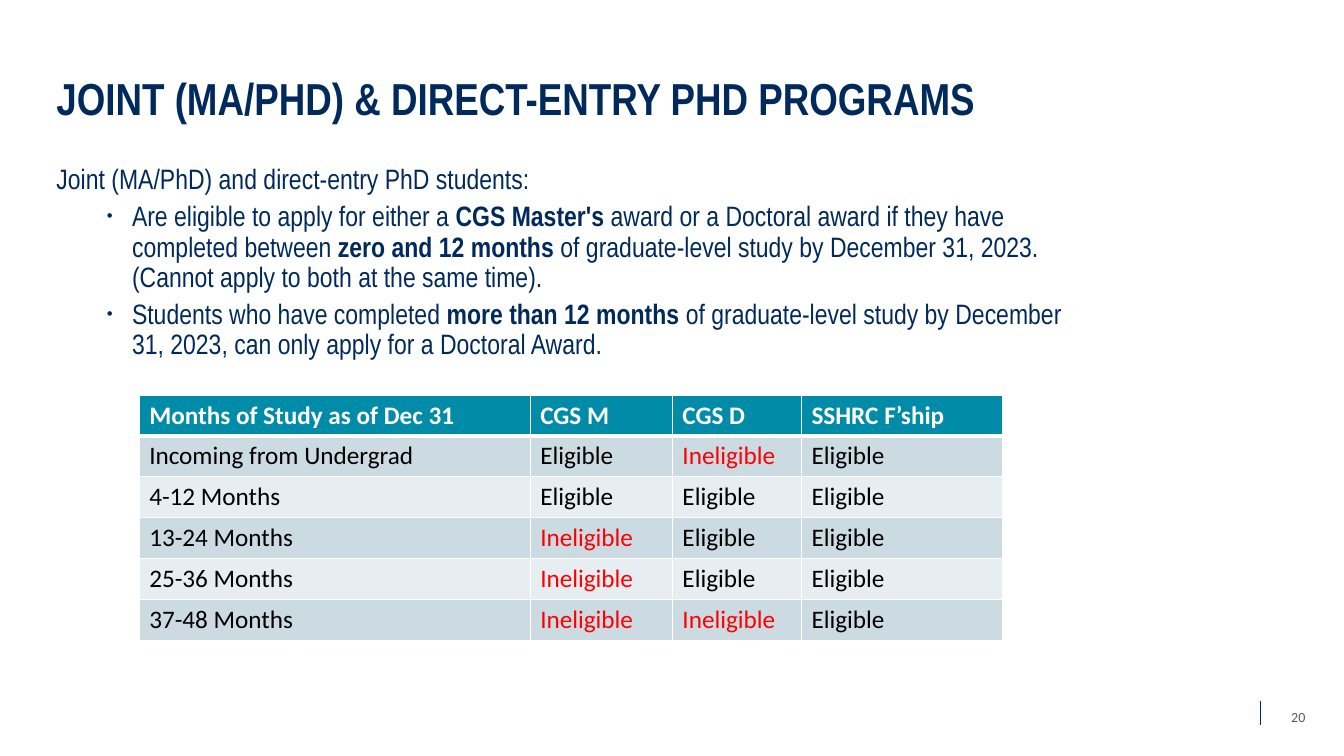
from dataclasses import dataclass

from lxml.etree import SubElement
from pptx import Presentation
from pptx.dml.color import RGBColor
from pptx.enum.shapes import MSO_CONNECTOR
from pptx.enum.text import MSO_ANCHOR, MSO_AUTO_SIZE, PP_ALIGN
from pptx.oxml.ns import qn
from pptx.util import Pt


@dataclass(frozen=True)
class Theme:
    navy: str = "002A5C"
    teal: str = "008BA9"
    band_dark: str = "CCDAE2"
    band_light: str = "E7EEF1"
    white: str = "FFFFFF"
    black: str = "000000"
    red: str = "FF0000"
    grey: str = "595959"
    text_font: str = "Arial Narrow"
    table_font: str = "Calibri"
    title_size: int = 32
    body_size: int = 20
    table_size: int = 18
    number_size: int = 10


THEME = Theme()

TITLE = "JOINT (MA/PHD) & DIRECT-ENTRY PHD PROGRAMS"
INTRO = "Joint (MA/PhD) and direct-entry PhD students:"
# Each bullet is a list of (words, bold) pieces.
RULES = [
    [("Are eligible to apply for either a ", False),
     ("CGS Master's ", True),
     ("award or a Doctoral award if they have completed between ", False),
     ("zero and 12 months ", True),
     ("of graduate-level study by December 31, 2023. "
      "(Cannot apply to both at the same time).", False)],
    [("Students who have completed ", False),
     ("more than 12 months ", True),
     ("of graduate-level study by December 31, 2023, "
      "can only apply for a Doctoral Award.", False)],
]
YES, NO = "Eligible", "Ineligible"
ELIGIBILITY = [
    ["Months of Study as of Dec 31", "CGS M", "CGS D", "SSHRC F’ship"],
    ["Incoming from Undergrad", YES, NO, YES],
    ["4-12 Months", YES, YES, YES],
    ["13-24 Months", NO, YES, YES],
    ["25-36 Months", NO, YES, YES],
    ["37-48 Months", NO, NO, YES],
]
COLUMN_WIDTHS = [279.3, 101.6, 92.2, 144]


def rgb(colour):
    return RGBColor.from_string(colour)


def set_font(paragraph, name, size, colour, bold=False):
    font = paragraph.font
    font.name, font.size, font.bold = name, Pt(size), bold
    font.color.rgb = rgb(colour)


def place(shape, left, top, width, height):
    shape.left, shape.top = Pt(left), Pt(top)
    shape.width, shape.height = Pt(width), Pt(height)


def set_bullet(paragraph, indent, hanging, char=None):
    """Set the indents, and a small bullet if char is given."""
    props = paragraph._p.get_or_add_pPr()
    props.set("marL", str(Pt(indent)))
    props.set("indent", str(-Pt(hanging)))
    if char:
        SubElement(props, qn("a:buSzPct"), val="60000")
        SubElement(props, qn("a:buFont"), typeface="Arial")
        SubElement(props, qn("a:buChar"), char=char)
    else:
        SubElement(props, qn("a:buNone"))


def fill_title(title, box):
    place(title, *box)
    frame = title.text_frame
    frame.text = TITLE
    frame.vertical_anchor = MSO_ANCHOR.BOTTOM
    frame.auto_size = MSO_AUTO_SIZE.NONE
    heading = frame.paragraphs[0]
    heading.alignment = PP_ALIGN.LEFT
    heading.line_spacing = 0.9
    set_font(heading, THEME.text_font, THEME.title_size, THEME.navy, bold=True)


def fill_body(body, box):
    place(body, *box)
    frame = body.text_frame
    frame.auto_size = MSO_AUTO_SIZE.NONE
    frame.text = INTRO
    intro = frame.paragraphs[0]
    set_bullet(intro, 0, 0)
    intro.space_before = Pt(0)
    for pieces in RULES:
        rule = frame.add_paragraph()
        rule.level = 1
        set_bullet(rule, 54, 18, "•")
        rule.space_before = Pt(5)
        for words, bold in pieces:
            run = rule.add_run()
            run.text = words
            if bold:
                run.font.bold = True
    for paragraph in frame.paragraphs:
        paragraph.line_spacing = 0.9
        set_font(paragraph, THEME.text_font, THEME.body_size, THEME.navy)


def set_borders(cell, top, bottom):
    """Draw white borders; top and bottom are widths in points."""
    props = cell._tc.get_or_add_tcPr()
    widths = {"a:lnL": 1, "a:lnR": 1, "a:lnT": top, "a:lnB": bottom}
    for position, (side, width) in enumerate(widths.items()):
        line = props.makeelement(qn(side), {"w": str(Pt(width))})
        fill = SubElement(line, qn("a:solidFill"))
        SubElement(fill, qn("a:srgbClr"), val=THEME.white)
        props.insert(position, line)


def add_eligibility_table(slide, left, top, row_height):
    table = slide.shapes.add_table(
        len(ELIGIBILITY), len(COLUMN_WIDTHS), Pt(left), Pt(top),
        Pt(sum(COLUMN_WIDTHS)), Pt(row_height * len(ELIGIBILITY))).table
    for column, width in zip(table.columns, COLUMN_WIDTHS):
        column.width = Pt(width)
    for row, entries in enumerate(ELIGIBILITY):
        header = row == 0
        band = THEME.band_dark if row % 2 else THEME.band_light
        for column, entry in enumerate(entries):
            cell = table.cell(row, column)
            cell.text = entry
            cell.fill.solid()
            cell.fill.fore_color.rgb = rgb(THEME.teal if header else band)
            set_borders(cell, 3 if row == 1 else 1, 3 if header else 1)
            colour = THEME.red if entry == NO else THEME.black
            set_font(cell.text_frame.paragraphs[0], THEME.table_font,
                     THEME.table_size, THEME.white if header else colour,
                     bold=header)


def add_page_number(slide, number, left, top, width, height):
    """Add the number with a thin rule to its left."""
    rule_x = left - 10
    rule = slide.shapes.add_connector(
        MSO_CONNECTOR.STRAIGHT, Pt(rule_x), Pt(top + 2.9),
        Pt(rule_x), Pt(top + 20.2))
    rule.line.color.rgb = rgb(THEME.navy)
    rule.line.width = Pt(0.5)
    SubElement(rule._element.spPr, qn("a:effectLst"))
    frame = slide.shapes.add_textbox(
        Pt(left), Pt(top), Pt(width), Pt(height)).text_frame
    frame.word_wrap = True
    frame.vertical_anchor = MSO_ANCHOR.MIDDLE
    frame.text = str(number)
    label = frame.paragraphs[0]
    label.alignment = PP_ALIGN.CENTER
    set_font(label, THEME.table_font, THEME.number_size, THEME.grey)


def main():
    deck = Presentation()
    deck.slide_width, deck.slide_height = Pt(960), Pt(540)
    slide = deck.slides.add_slide(deck.slide_layouts[1])
    fill_title(slide.shapes.title, (33.1, 23.8, 748.8, 69.1))
    fill_body(slide.placeholders[1], (33.1, 114.5, 748.8, 357.1))
    add_eligibility_table(slide, 99.4, 282.2, 29.2)
    add_page_number(slide, 20, 910, 497.5, 34.6, 28.8)
    deck.save("out.pptx")


if __name__ == "__main__":
    main()
